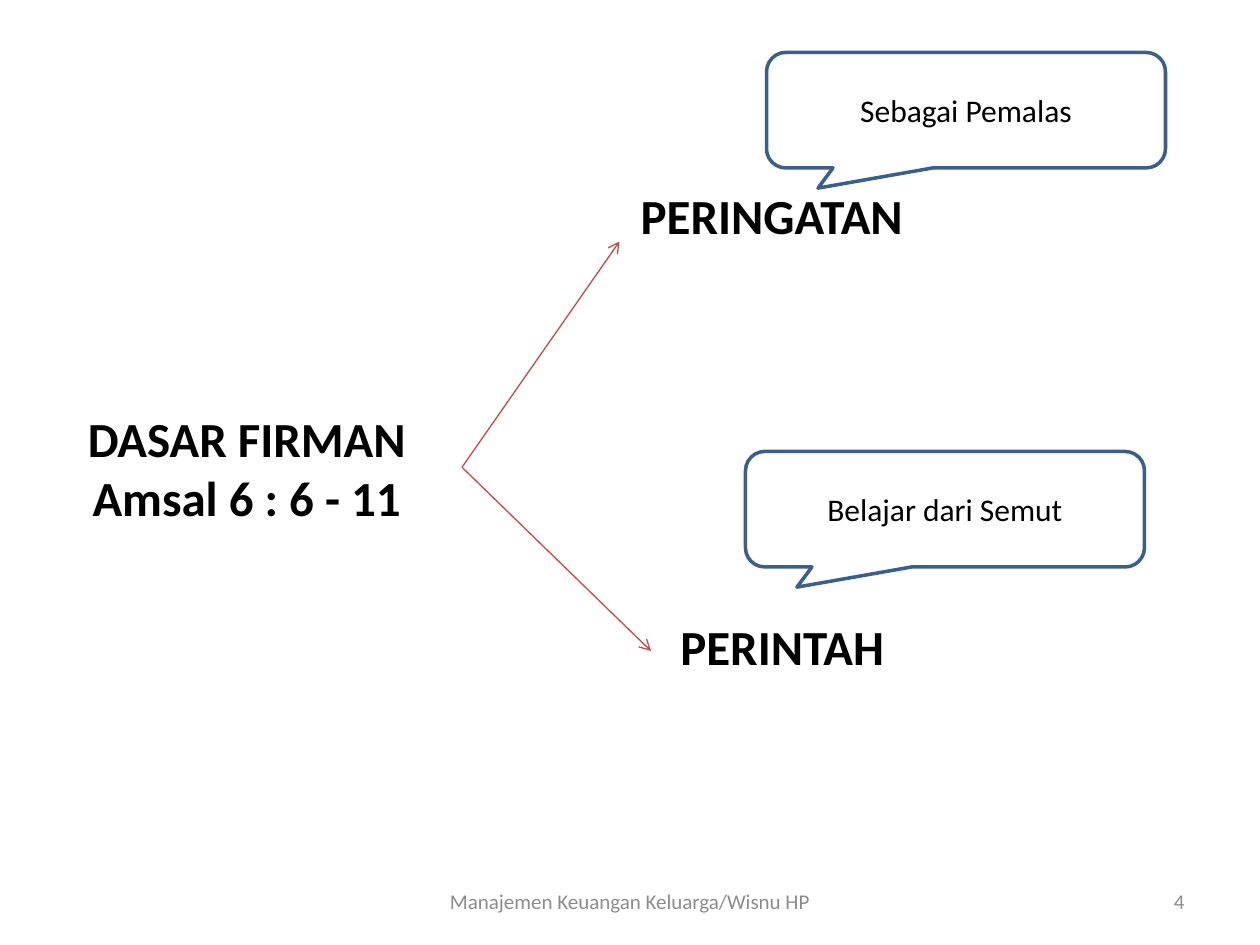
from pptx import Presentation
from pptx.dml.color import RGBColor
from pptx.enum.shapes import MSO_CONNECTOR, MSO_SHAPE
from pptx.enum.text import MSO_ANCHOR, PP_ALIGN
from pptx.oxml.ns import qn
from pptx.util import Pt
from lxml.etree import SubElement

WHITE = RGBColor(0xFF, 0xFF, 0xFF)
BLACK = RGBColor(0, 0, 0)
GREY = RGBColor(0x8C, 0x8C, 0x8C)
BLUE = RGBColor(0x3A, 0x5F, 0x8C)
RED = RGBColor(0xBF, 0x4C, 0x48)

# Content: lines of text and left, top in points
BOX_SIZE = (246, 90)
BOXES = [
    (["DASAR FIRMAN", "Amsal 6 : 6 - 11"], 18, 222),
    (["PERINGATAN"], 318, 78),
    (["PERINTAH"], 324, 324),
]
CALLOUT_SIZE = (228, 66)
CALLOUT_ADJUSTMENTS = (-0.371, 0.675, 0.167)
CALLOUTS = [
    (["Sebagai Pemalas"], 438, 30),
    (["Belajar dari Semut"], 426, 258),
]
ARROW_TIPS = [(354, 138), (372, 372)]
FOOTERS = [
    (["Manajemen Keuangan Keluarga/Wisnu HP"], 246, 228, PP_ALIGN.CENTER),
    (["4"], 516, 168, PP_ALIGN.RIGHT),
]
FOOTER_TOP, FOOTER_HEIGHT = 500.5, 29

BOX_FONT = {"size": Pt(28), "bold": True}
CALLOUT_FONT = {"size": Pt(18)}
FOOTER_FONT = {"size": Pt(12)}


def write(shape, lines, font_values, color=BLACK, alignment=PP_ALIGN.CENTER):
    frame = shape.text_frame
    frame.word_wrap = True
    frame.vertical_anchor = MSO_ANCHOR.MIDDLE
    for index, line in enumerate(lines):
        paragraph = frame.add_paragraph() if index else frame.paragraphs[0]
        paragraph.alignment = alignment
        run = paragraph.add_run()
        run.text = line
        for name, value in {"name": "Calibri", **font_values}.items():
            setattr(run.font, name, value)
        run.font.color.rgb = color


def add_panel(slide, kind, lines, left, top, size, line_color, font_values):
    shape = slide.shapes.add_shape(kind, Pt(left), Pt(top), *map(Pt, size))
    shape.shadow.inherit = False
    shape.fill.solid()
    shape.fill.fore_color.rgb = WHITE
    shape.line.color.rgb = line_color
    shape.line.width = Pt(2)
    write(shape, lines, font_values)
    return shape


def add_arrow(slide, source, tip):
    start = source.left + source.width, source.top + source.height // 2
    arrow = slide.shapes.add_connector(MSO_CONNECTOR.STRAIGHT, *start, *map(Pt, tip))
    arrow.begin_connect(source, 3)
    arrow.line.color.rgb = RED
    arrow.line.width = Pt(0.75)
    SubElement(arrow.line._get_or_add_ln(), qn("a:tailEnd"), type="arrow")
    SubElement(arrow._element.spPr, qn("a:effectLst"))


presentation = Presentation()
presentation.slide_width, presentation.slide_height = Pt(720), Pt(540)
slide = presentation.slides.add_slide(presentation.slide_layouts[6])

# Theme boxes
boxes = [
    add_panel(slide, MSO_SHAPE.RECTANGLE, lines, left, top, BOX_SIZE, WHITE, BOX_FONT)
    for lines, left, top in BOXES
]

# Arrows from the scripture box
for tip in ARROW_TIPS:
    add_arrow(slide, boxes[0], tip)

# Callouts
for lines, left, top in CALLOUTS:
    callout = add_panel(slide, MSO_SHAPE.ROUNDED_RECTANGULAR_CALLOUT, lines, left, top,
                        CALLOUT_SIZE, BLUE, CALLOUT_FONT)
    for index, value in enumerate(CALLOUT_ADJUSTMENTS):
        callout.adjustments[index] = value

# Footer and slide number
for lines, left, width, alignment in FOOTERS:
    footer = slide.shapes.add_textbox(Pt(left), Pt(FOOTER_TOP), Pt(width), Pt(FOOTER_HEIGHT))
    write(footer, lines, FOOTER_FONT, GREY, alignment)

presentation.save("out.pptx")
